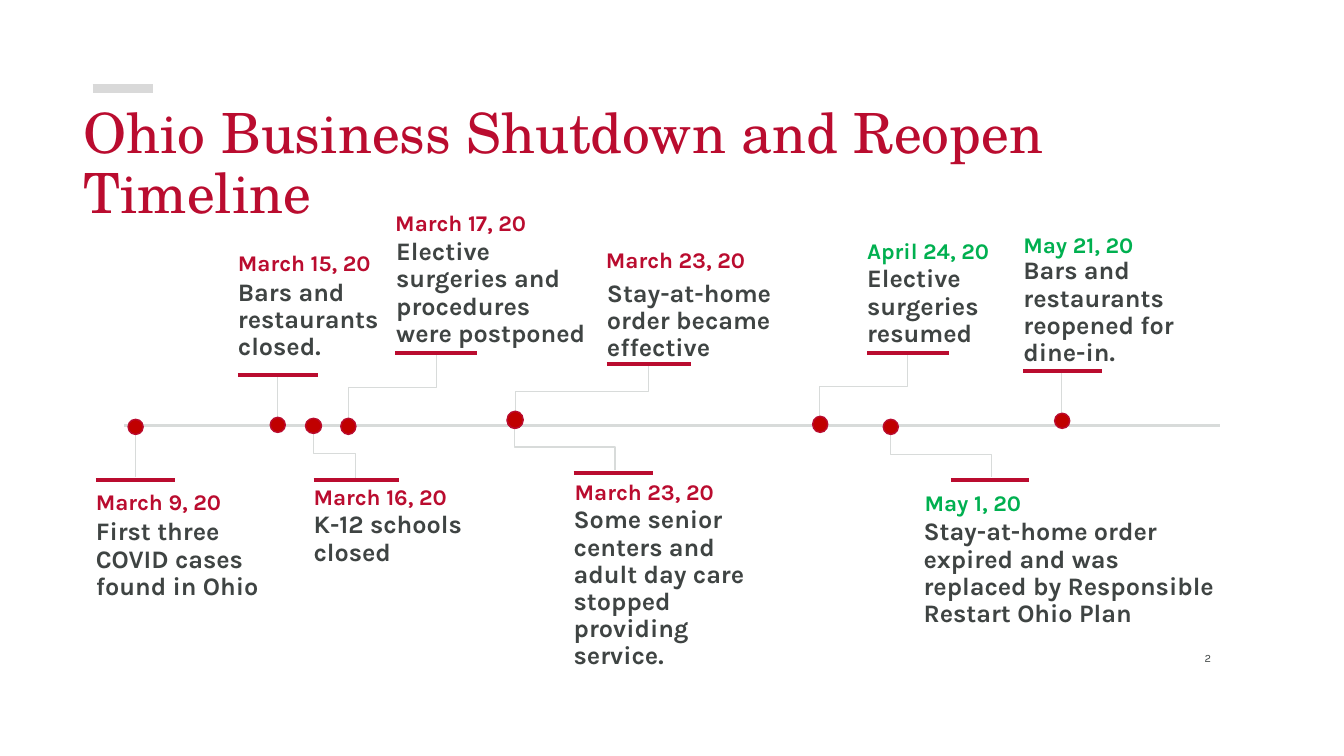
import collections
import pptx
import pptx.util
import pptx.dml.color
import pptx.enum.shapes
import pptx.enum.text
import pptx.oxml
import pptx.oxml.ns

Inches = pptx.util.Inches
Pt = pptx.util.Pt
Kind = pptx.enum.shapes.MSO_CONNECTOR
Align = pptx.enum.text.PP_ALIGN
Anchor = pptx.enum.text.MSO_ANCHOR

RED, GREEN, DARK = "BA0C2F", "00B050", "3F4443"
PALE, GREY, DOT = "D8DBDA", "D9D9D9", "C00000"

# Places are (x, y) in inches; bar is (x, y, width); dot is (x, y, width, height);
# stem is (x1, y1, x2, y2), read downwards; bend is the share of its height.
Event = collections.namedtuple(
    "Event", "date note color head body width bar dot stem bend")

EVENTS = [
    Event("March 9, 20", "First three COVID cases found in Ohio", RED,
          (0.95, 4.87), (0.95, 5.15), 1.92, (0.95, 4.76, 0.79),
          (1.27, 4.16, 0.15, 0.15), (1.34, 4.29, 1.34, 4.73), None),
    Event("March 15, 20", "Bars and restaurants closed.", RED,
          (2.36, 2.5), (2.36, 2.77), 1.92, (2.36, 3.72, 0.79),
          (2.68, 4.14, 0.15, 0.15), (2.75, 3.71, 2.75, 4.15), None),
    Event("March 16, 20", "K-12 schools closed", RED,
          (3.11, 4.82), (3.11, 5.08), 1.92, (3.11, 4.76, 0.85),
          (3.03, 4.15, 0.16, 0.15), (3.11, 4.28, 3.53, 4.76), 0.46),
    Event("March 17, 20", "Elective surgeries and procedures were postponed", RED,
          (3.92, 2.11), (3.93, 2.37), 1.94, (3.92, 3.5, 0.81),
          (3.38, 4.15, 0.15, 0.16), (4.33, 3.5, 3.46, 4.17), 0.52),
    Event("March 23, 20",
          "Some senior centers and adult day care stopped providing service.", RED,
          (5.7, 4.77), (5.69, 5.03), 1.92, (5.69, 4.69, 0.79),
          (5.03, 4.1, 0.15, 0.15), (5.1, 4.21, 6.1, 4.66), 0.5),
    Event("March 23, 20", "Stay-at-home order became effective", RED,
          (6.01, 2.47), (6.02, 2.78), 1.92, (6.02, 3.61, 0.83),
          (5.03, 4.08, 0.16, 0.17), (6.43, 3.6, 5.11, 4.1), 0.57),
    Event("April 24, 20", "Elective surgeries resumed", GREEN,
          (8.6, 2.38), (8.6, 2.64), 1.92, (8.6, 3.5, 0.81),
          (8.06, 4.13, 0.15, 0.16), (9, 3.5, 8.13, 4.14), 0.52),
    Event("May 1, 20",
          "Stay-at-home order expired and was replaced by Responsible Restart Ohio Plan",
          GREEN, (9.17, 4.88), (9.16, 5.15), 2.91, (9.43, 4.76, 0.78),
          (8.76, 4.16, 0.15, 0.15), (8.83, 4.28, 9.83, 4.73), 0.5),
    Event("May 21, 20", "Bars and restaurants reopened for dine-in.", GREEN,
          (10.15, 2.32), (10.15, 2.56), 1.92, (10.15, 3.68, 0.78),
          (10.46, 4.1, 0.15, 0.15), (10.53, 3.67, 10.53, 4.1), None),
]


def paint(target, color):
    target.rgb = pptx.dml.color.RGBColor.from_string(color)


def add_line(slide, x1, y1, x2, y2, color, weight, kind=Kind.STRAIGHT):
    line = slide.shapes.add_connector(
        kind, Inches(x1), Inches(y1), Inches(x2), Inches(y2))
    paint(line.line.color, color)
    line.line.width = Pt(weight)
    props = line._element.spPr
    props.append(pptx.oxml.parse_xml(
        "<a:effectLst %s/>" % pptx.oxml.ns.nsdecls("a")))
    return line


def add_bend(slide, x1, y1, x2, y2, bend):
    """Draw an elbow that leaves and arrives vertically, as a turned frame."""
    mid_x, mid_y = (x1 + x2) / 2, (y1 + y2) / 2
    half_w, half_h = (y2 - y1) / 2, abs(x2 - x1) / 2
    line = add_line(slide, mid_x - half_w, mid_y - half_h,
                    mid_x + half_w, mid_y + half_h, PALE, 0.75, Kind.ELBOW)
    props = line._element.spPr
    frame = props.find(pptx.oxml.ns.qn("a:xfrm"))
    if x2 > x1:
        frame.set("rot", str(270 * 60000))
        frame.set("flipH", "1")
    else:
        frame.set("rot", str(90 * 60000))
    guides = props.find(pptx.oxml.ns.qn("a:prstGeom")).get_or_add_avLst()
    guides.append(pptx.oxml.parse_xml(
        '<a:gd %s name="adj1" fmla="val %d"/>'
        % (pptx.oxml.ns.nsdecls("a"), round(bend * 100000))))


def add_dot(slide, x, y, width, height):
    dot = slide.shapes.add_shape(
        pptx.enum.shapes.MSO_SHAPE.OVAL,
        Inches(x), Inches(y), Inches(width), Inches(height))
    dot.shadow.inherit = False
    dot.fill.solid()
    paint(dot.fill.fore_color, DOT)
    paint(dot.line.color, RED)
    dot.line.width = Pt(1)


def add_text(slide, text, x, y, width, height, size, color,
             face="Karla", bold=False, inset=True, spacing=0.9):
    box = slide.shapes.add_textbox(
        Inches(x), Inches(y), Inches(width), Inches(height))
    frame = box.text_frame
    frame.word_wrap = True
    if not inset:
        frame.margin_left = frame.margin_right = 0
        frame.margin_top = frame.margin_bottom = 0
    frame.text = text
    frame.paragraphs[0].line_spacing = spacing
    font = frame.paragraphs[0].runs[0].font
    font.name, font.size, font.bold = face, Pt(size), bold
    paint(font.color, color)
    return frame


def add_event(slide, event):
    if event.bend is None:
        add_line(slide, *event.stem, PALE, 0.75)
    else:
        add_bend(slide, *event.stem, event.bend)
    x, y, width = event.bar
    add_line(slide, x, y, x + width, y, RED, 3)
    add_dot(slide, *event.dot)
    add_text(slide, event.date, *event.head, 1.92, 0.16, 16, event.color,
             bold=True, inset=False)
    add_text(slide, event.note, *event.body, event.width, 0.25, 18, DARK,
             bold=True, inset=False)


def main():
    deck = pptx.Presentation()
    deck.slide_width, deck.slide_height = Inches(13.33), Inches(7.5)
    slide = deck.slides.add_slide(deck.slide_layouts[6])
    add_line(slide, 0.92, 0.88, 1.52, 0.88, GREY, 6.25)
    add_text(slide, "Ohio Business Shutdown and Reopen Timeline",
             0.73, 1, 11.86, 0.92, 39.6, RED, face="TeX Gyre Schola")
    add_line(slide, 1.23, 4.22, 12.1, 4.22, PALE, 1.75)
    for event in EVENTS:
        add_event(slide, event)
    number = add_text(slide, "2", 11.57, 6.33, 0.54, 0.4, 8, DARK, spacing=1.0)
    number.vertical_anchor = Anchor.MIDDLE
    number.paragraphs[0].alignment = Align.RIGHT
    deck.save("out.pptx")


if __name__ == "__main__":
    main()
